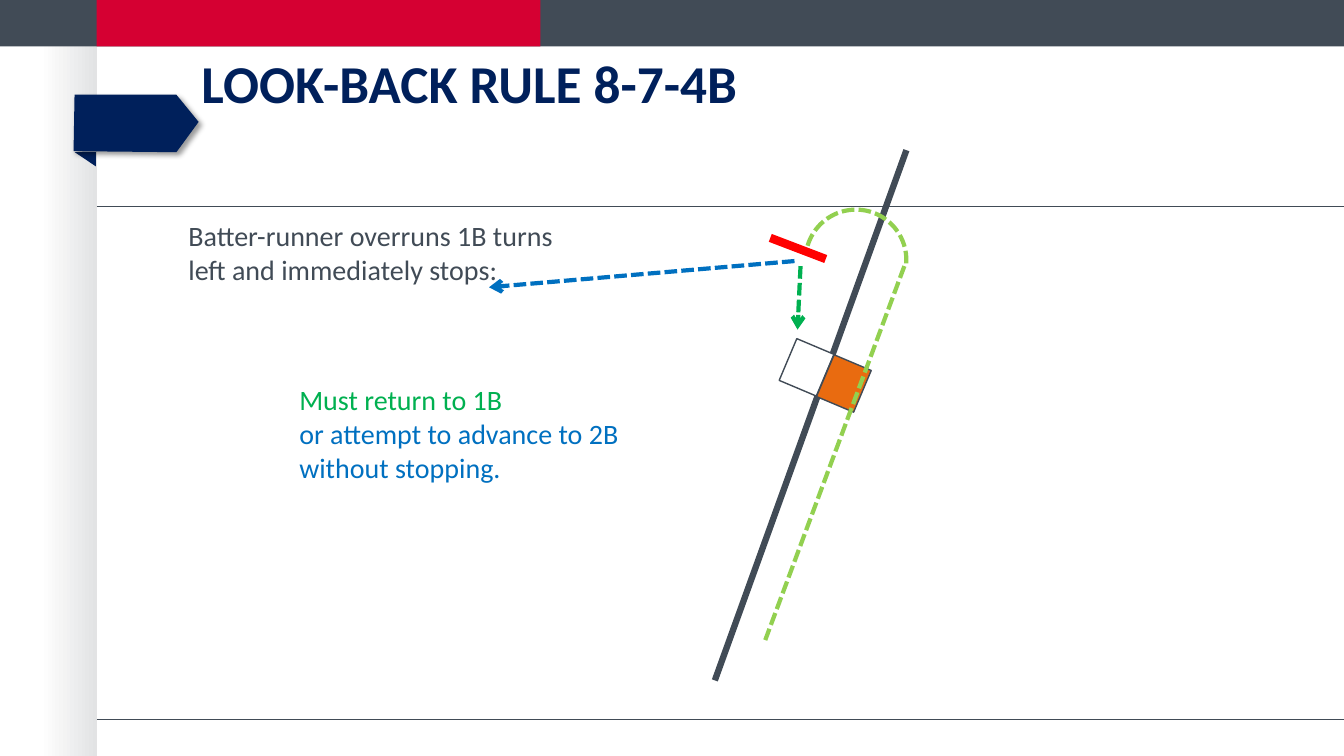
import pptx
import pptx.util
import pptx.dml.color
import pptx.enum.dml
import pptx.enum.shapes
import pptx.enum.text
import pptx.oxml
import pptx.oxml.ns
import lxml.etree

PX = 9144  # EMU per px, 100 px to the inch
COLORS = {
    "slate": "414B56", "red": "D50032", "navy": "00205B", "white": "FFFFFF",
    "shade": "E2E3E4", "orange": "E96B10", "green": "00B050", "blue": "0070C0",
    "stop": "FF0000", "lime": "92D050",
}
SHAPES = pptx.enum.shapes.MSO_SHAPE
DASH = pptx.enum.dml.MSO_LINE.SQUARE_DOT


def color(name):
    return pptx.dml.color.RGBColor.from_string(COLORS[name])


def paint(shape, fill, line=None, width=1):
    """Give a shape a flat fill, an optional outline and no shadow."""
    shape.shadow.inherit = False
    if fill:
        shape.fill.solid()
        shape.fill.fore_color.rgb = color(fill)
    else:
        shape.fill.background()
    if line:
        shape.line.color.rgb = color(line)
        shape.line.width = pptx.util.Pt(width)
    else:
        shape.line.fill.background()


presentation = pptx.Presentation()
presentation.slide_width = 1333 * PX
presentation.slide_height = 750 * PX
slide = presentation.slides.add_slide(presentation.slide_layouts[6])
shapes = slide.shapes

# Side shade, fading to white on the left
side_shade = shapes.add_shape(SHAPES.RECTANGLE, 40 * PX, 45 * PX, 56 * PX, 705 * PX)
paint(side_shade, "white")
side_shade.fill.gradient()
side_shade.fill.gradient_angle = 0
for stop, name in zip(side_shade.fill.gradient_stops, ["white", "shade"]):
    stop.color.rgb = color(name)

# Header bars
for left, width, name in [(0, 1333, "slate"), (96, 440, "red")]:
    bar = shapes.add_shape(SHAPES.RECTANGLE, left * PX, 0, width * PX, 46 * PX)
    paint(bar, name)

# Ribbon: folded corner, then the pointed tab with its shadow
fold = [(74, 151), (95, 151), (95, 165)]
tab = [(74, 94), (73, 150), (175, 151), (197, 121), (175, 94)]
for points in [fold, tab]:
    builder = shapes.build_freeform(*points[0], scale=PX)
    builder.add_line_segments(points[1:], close=True)
    ribbon = builder.convert_to_shape()
    paint(ribbon, "navy")
effects = ribbon._element.spPr.find(pptx.oxml.ns.qn("a:effectLst"))
effects.append(pptx.oxml.parse_xml(
    f'<a:outerShdw {pptx.oxml.ns.nsdecls("a")} blurRad="50800" dist="38100" '
    'dir="2700000" algn="tl" rotWithShape="0"><a:srgbClr val="000000">'
    '<a:alpha val="40000"/></a:srgbClr></a:outerShdw>'))

# Double first base
bases = []
for left, top, name in [(780, 342, "white"), (817, 358, "orange")]:
    base = shapes.add_shape(SHAPES.RECTANGLE, left * PX, top * PX, 40 * PX, 45 * PX)
    base.rotation = 22.9
    paint(base, name, "slate")
    bases.append(base)

# Runner's turn past the base
turn = shapes.add_shape(SHAPES.ARC, 799 * PX, 208 * PX, 100 * PX, 100 * PX)
for index, degrees in enumerate([196.4, 6]):
    turn.adjustments[index] = degrees * 0.6
paint(turn, None, "lime", 3)
turn.line.dash_style = DASH

# Rules, foul line, stop mark and runner paths
lines = [
    ((96, 205), (1333, 205), "slate", 1, False, False),
    ((96, 714), (1333, 714), "slate", 1, False, False),
    ((709, 675), (899, 149), "slate", 4.5, False, False),
    ((764, 236), (819, 257), "stop", 6, False, False),
    ((897, 264), (759, 635), "lime", 3, True, False),
    ((794, 264), (791, 327), "green", 3, True, True),
    ((788, 259), (485, 285), "blue", 3, True, True),
]
for start, end, name, width, dashed, arrow in lines:
    connector = shapes.add_connector(
        pptx.enum.shapes.MSO_CONNECTOR.STRAIGHT,
        *[value * PX for value in start + end])
    connector.line.color.rgb = color(name)
    connector.line.width = pptx.util.Pt(width)
    if dashed:
        connector.line.dash_style = DASH
    if arrow:
        outline = connector.line._get_or_add_ln()
        lxml.etree.SubElement(outline, pptx.oxml.ns.qn("a:tailEnd"), type="arrow")
    lxml.etree.SubElement(connector._element.spPr, pptx.oxml.ns.qn("a:effectLst"))
    if width == 4.5:  # the foul line runs beneath the bases
        bases[0]._element.addprevious(connector._element)

# Texts
TOP = pptx.enum.text.MSO_ANCHOR.TOP
MIDDLE = pptx.enum.text.MSO_ANCHOR.MIDDLE
texts = [
    ((190, 19, 958, 136), MIDDLE, 38, True, [("LOOK-BACK RULE 8-7-4B", "navy")]),
    ((287, 375, 400, 111), TOP, 20, False, [
        ("Must return to 1B", "green"),
        ("or attempt to advance to 2B without stopping.", "blue")]),
    ((177, 212, 397, 77), TOP, 20, False, [
        ("Batter-runner overruns 1B turns left and immediately stops:", "slate")]),
]
for area, anchor, size, bold, paragraphs in texts:
    frame = shapes.add_textbox(*[value * PX for value in area]).text_frame
    frame.word_wrap = True
    frame.vertical_anchor = anchor
    for index, (text, name) in enumerate(paragraphs):
        paragraph = frame.add_paragraph() if index else frame.paragraphs[0]
        paragraph.text = text
        if bold:
            paragraph.line_spacing = pptx.util.Pt(size)
        font = paragraph.runs[0].font
        formats = {"name": "Calibri", "size": pptx.util.Pt(size), "bold": bold}
        for attribute, value in formats.items():
            setattr(font, attribute, value)
        font.color.rgb = color(name)

presentation.save("out.pptx")
